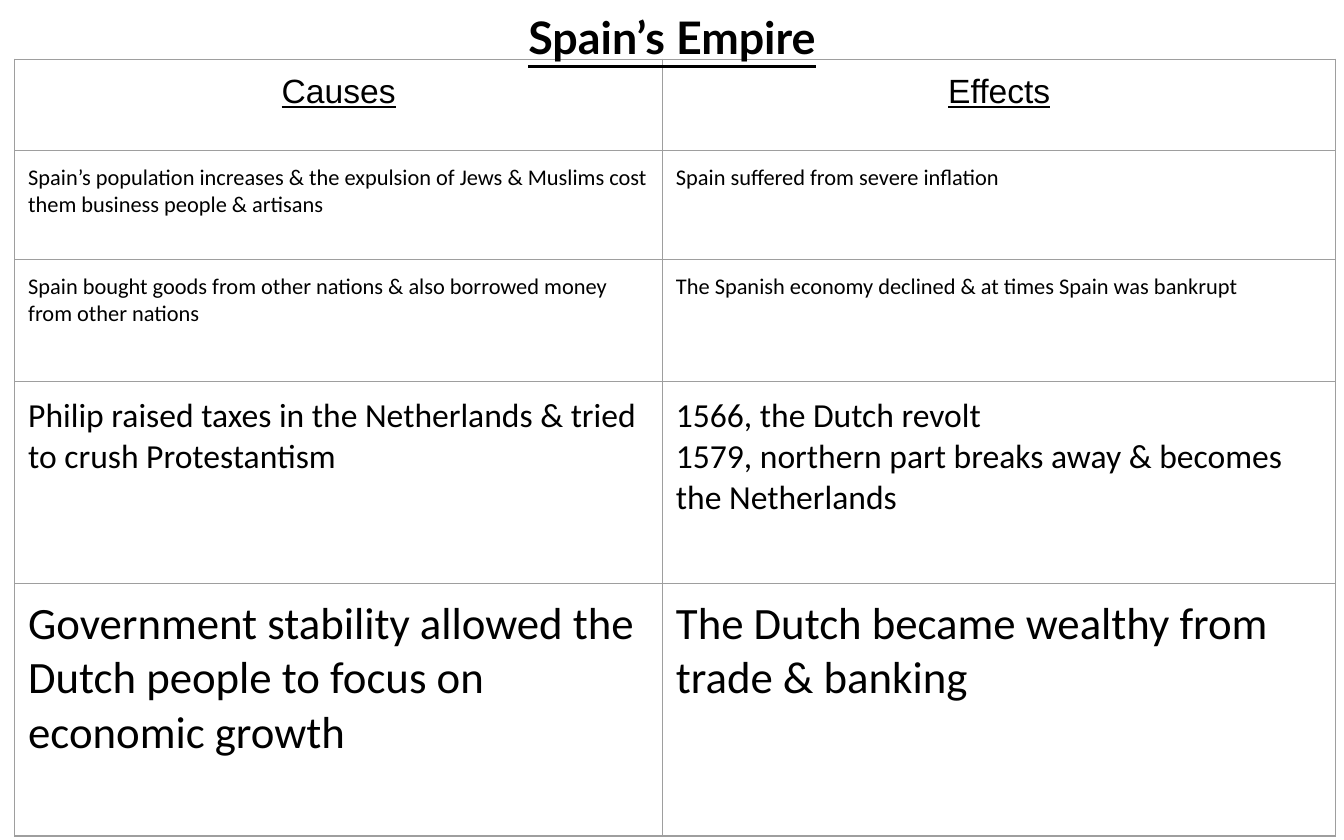
from lxml import etree
from pptx import Presentation, util as u
from pptx.dml.color import RGBColor
from pptx.enum import text
from pptx.oxml.ns import qn

BLACK = RGBColor(0x00, 0x00, 0x00)
GRAY = RGBColor(0x9E, 0x9E, 0x9E)

TITLE = "Spain’s Empire"
TITLE_FORMAT = {"name": "Lato", "size": u.Pt(24), "bold": True, "underline": True}
HEADER_FORMAT = {"name": "Arial", "size": u.Pt(18), "underline": True}

# Row height in inches, text format, then the causes and effects; a newline starts a paragraph
ROWS = [
    (0.68, HEADER_FORMAT, "Causes", "Effects"),
    (0.81, {"name": "Calibri", "size": u.Pt(12)},
     "Spain’s population increases & the expulsion of Jews & Muslims cost "
     "them business people & artisans",
     "Spain suffered from severe inflation"),
    (0.91, {"name": "Calibri", "size": u.Pt(12)},
     "Spain bought goods from other nations & also borrowed money from other nations",
     "The Spanish economy declined & at times Spain was bankrupt"),
    (1.5, {"name": "Calibri", "size": u.Pt(18)},
     "Philip raised taxes in the Netherlands & tried to crush Protestantism",
     "1566, the Dutch revolt\n"
     "1579, northern part breaks away & becomes the Netherlands"),
    (1.88, {"name": "Calibri", "size": u.Pt(24)},
     "Government stability allowed the Dutch people to focus on economic growth",
     "The Dutch became wealthy from trade & banking"),
]
COLUMN_WIDTHS = [4.82, 5.01]
TABLE_LEFT, TABLE_TOP = 0.11, 0.44
TITLE_HEIGHT = 0.55
INSETS = dict.fromkeys(
    ("margin_left", "margin_top", "margin_right", "margin_bottom"), u.Inches(0.1))


def set_all(target, values):
    for name, value in values.items():
        setattr(target, name, value)


def write(frame, words, font_format, alignment):
    frame.word_wrap = True
    frame.text = words
    for para in frame.paragraphs:
        para.alignment = alignment
        for span in para.runs:
            set_all(span.font, font_format)
            span.font.color.rgb = BLACK


def add_borders(cell):
    """Draw all four cell edges; they must precede the fill in the XML."""
    properties = cell._tc.get_or_add_tcPr()
    for position, edge in enumerate(("a:lnL", "a:lnR", "a:lnT", "a:lnB")):
        line = etree.Element(qn(edge), w=str(u.Pt(0.75)))
        fill = etree.SubElement(line, qn("a:solidFill"))
        etree.SubElement(fill, qn("a:srgbClr"), val=str(GRAY))
        properties.insert(position, line)


def add_causes_table(page):
    heights = [row[0] for row in ROWS]
    table = page.shapes.add_table(
        len(ROWS), len(COLUMN_WIDTHS), u.Inches(TABLE_LEFT), u.Inches(TABLE_TOP),
        u.Inches(sum(COLUMN_WIDTHS)), u.Inches(sum(heights))).table
    set_all(table, {"first_row": False, "horz_banding": False})
    for column, width in zip(table.columns, COLUMN_WIDTHS):
        column.width = u.Inches(width)
    for row, (height, font_format, *entries) in zip(table.rows, ROWS):
        row.height = u.Inches(height)
        is_header = font_format is HEADER_FORMAT
        alignment = text.PP_ALIGN.CENTER if is_header else text.PP_ALIGN.LEFT
        for cell, words in zip(row.cells, entries):
            set_all(cell, INSETS)
            cell.fill.background()
            add_borders(cell)
            write(cell.text_frame, words, font_format, alignment)


def add_title(page, width):
    box = page.shapes.add_textbox(0, 0, width, u.Inches(TITLE_HEIGHT))
    set_all(box.text_frame, INSETS)
    box.text_frame.vertical_anchor = text.MSO_ANCHOR.MIDDLE
    write(box.text_frame, TITLE, TITLE_FORMAT, text.PP_ALIGN.CENTER)


def main():
    deck = Presentation()
    set_all(deck, {"slide_width": u.Inches(10), "slide_height": u.Inches(6.25)})
    page = deck.slides.add_slide(deck.slide_layouts[6])
    add_causes_table(page)
    add_title(page, deck.slide_width)
    deck.save("out.pptx")


if __name__ == "__main__":
    main()
